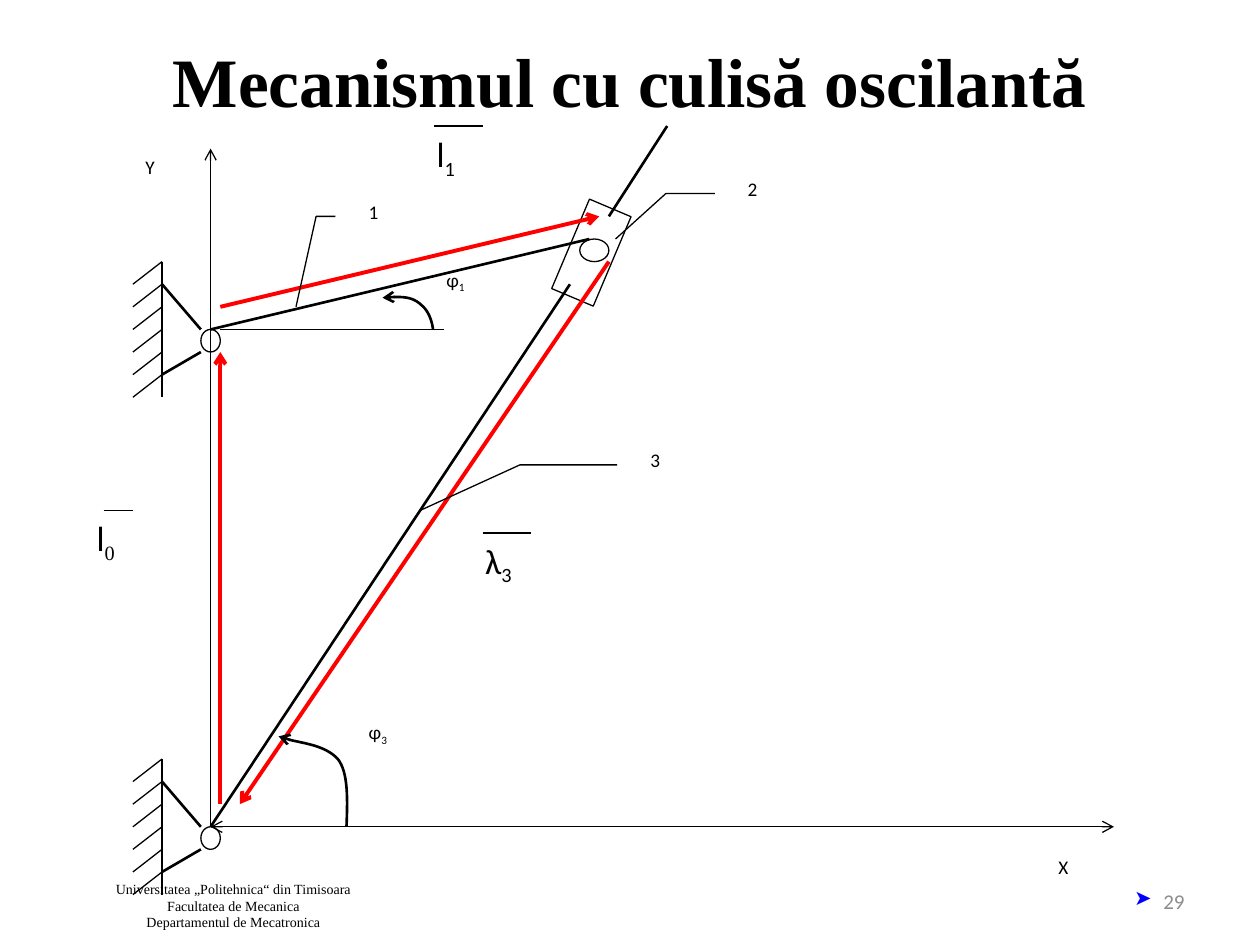
from dataclasses import dataclass

from lxml import etree
from pptx import Presentation
from pptx import util as u
from pptx.dml.color import RGBColor
from pptx.enum import shapes, text
from pptx.oxml.ns import qn


@dataclass(frozen=True)
class Theme:
    """Colours, fonts and sizes of the slide."""
    black: str = "000000"
    white: str = "FFFFFF"
    vector: str = "FF0000"
    bullet: str = "0000FF"
    grey: str = "8C8C8C"
    serif: str = "Times New Roman"
    sans: str = "Calibri"
    title: float = 39.6
    vector_name: float = 20
    label: float = 11
    number: float = 12
    footer: float = 8
    thin: float = 0.75
    bar: float = 1.5
    thick: float = 2.25


@dataclass(frozen=True)
class Box:
    """An area in centimetres, divided into a grid."""
    left: float
    top: float
    width: float
    height: float
    columns: int = 1
    rows: int = 1

    def point(self, column, row):
        """Return the position of a grid point."""
        return (u.Cm(self.left + column * self.width / self.columns),
                u.Cm(self.top + row * self.height / self.rows))

    def inner(self, column, row, columns, rows):
        """Return a smaller box that keeps the same grid cells."""
        cell_width, cell_height = self.width / self.columns, self.height / self.rows
        return Box(self.left + column * cell_width, self.top + row * cell_height,
                   columns * cell_width, rows * cell_height, columns, rows)

    def frame(self):
        """Return left, top, width and height as lengths."""
        return [u.Cm(value) for value in (self.left, self.top, self.width, self.height)]


THEME = Theme()
MIDDLE = text.MSO_ANCHOR.MIDDLE
ALIGN = text.PP_ALIGN
PRESET = shapes.MSO_SHAPE


def write_text(shape, content, size=THEME.label, font=THEME.sans, color=THEME.black,
               bold=False, align=ALIGN.LEFT, anchor=text.MSO_ANCHOR.TOP,
               subscript="", subscript_font=None, bullet=None, inset=None):
    """Fill a shape with formatted lines and an optional subscript."""
    frame = shape.text_frame
    frame.word_wrap = True
    frame.auto_size = text.MSO_AUTO_SIZE.NONE
    frame.vertical_anchor = anchor
    if inset is not None:
        frame.margin_left = frame.margin_right = u.Cm(inset)
        frame.margin_top = frame.margin_bottom = u.Cm(inset)
    for index, line in enumerate(content.split("\n")):
        paragraph = frame.add_paragraph() if index else frame.paragraphs[0]
        paragraph.alignment = align
        if bullet:
            add_bullet(paragraph, bullet)
        runs = [(line, font, None)]
        if subscript:
            runs.append((subscript, subscript_font or font, "-25000"))
        for words, name, baseline in runs:
            run = paragraph.add_run()
            run.text = words
            run.font.size, run.font.name, run.font.bold = u.Pt(size), name, bold
            run.font.color.rgb = RGBColor.from_string(color)
            if baseline:
                run._r.get_or_add_rPr().set("baseline", baseline)


def add_bullet(paragraph, character):
    """Give a paragraph a coloured hanging bullet."""
    properties = paragraph._p.get_or_add_pPr()
    properties.set("marL", str(u.Cm(0.59)))
    properties.set("indent", str(-u.Cm(0.59)))
    color = etree.SubElement(properties, qn("a:buClr"))
    etree.SubElement(color, qn("a:srgbClr")).set("val", THEME.bullet)
    etree.SubElement(properties, qn("a:buChar")).set("char", character)


def style_line(line, color, width, arrows=()):
    """Set colour, width and arrowheads of a line."""
    line.color.rgb = RGBColor.from_string(color)
    line.width = u.Pt(width)
    for end in arrows:
        etree.SubElement(line._get_or_add_ln(), qn(f"a:{end}")).set("type", "arrow")


def add_line(slide, box, start, end, width=THEME.thin, color=THEME.black, arrows=()):
    """Draw a straight line between two grid points."""
    connector = slide.shapes.add_connector(
        shapes.MSO_CONNECTOR.STRAIGHT, *box.point(*start), *box.point(*end))
    style_line(connector.line, color, width, arrows)
    etree.SubElement(connector._element.spPr, qn("a:effectLst"))


def add_shape(slide, box, preset, outlined=True, rotation=0):
    """Draw a white preset shape that fills a box."""
    shape = slide.shapes.add_shape(preset, *box.frame())
    shape.shadow.inherit = False
    shape.rotation = rotation
    shape.fill.solid()
    shape.fill.fore_color.rgb = RGBColor.from_string(THEME.white)
    if outlined:
        style_line(shape.line, THEME.black, THEME.thin)
    else:
        shape.line.fill.background()
    return shape


def add_curve(slide, box, points):
    """Draw an arrow of Bézier segments through grid control points."""
    start, *others = [box.point(*point) for point in points]
    builder = slide.shapes.build_freeform(*start)
    builder.add_line_segments(others, close=False)
    shape = builder.convert_to_shape()
    outline = shape._element.find(".//" + qn("a:path"))
    segments = outline.findall(qn("a:lnTo"))
    for first in range(0, len(segments), 3):
        curve = etree.SubElement(outline, qn("a:cubicBezTo"))
        for segment in segments[first:first + 3]:
            curve.append(segment[0])
            outline.remove(segment)
    shape.shadow.inherit = False
    shape.fill.background()
    style_line(shape.line, THEME.black, THEME.bar, ["tailEnd"])


def add_support(slide, box):
    """Draw a hatched wall with its pin joint."""
    add_shape(slide, box.inner(7, 3, 2, 1), PRESET.FLOWCHART_CONNECTOR)
    for start, end in [((3, 1), (7, 3)), ((7, 4), (3, 5)), ((3, 0), (3, 6))]:
        add_line(slide, box, start, end, THEME.bar)
    for row in range(box.rows):
        add_line(slide, box, (3, row), (0, row + 1))


def add_linkage(slide, box):
    """Draw the slider, the bars, the axes and the vectors."""
    add_shape(slide, box.inner(47.2, 4.6, 10, 2), PRESET.RECTANGLE, rotation=292.9)
    add_shape(slide, box.inner(51, 5, 3, 1), PRESET.FLOWCHART_CONNECTOR)
    for start, end in [((13, 9), (52, 5)), ((50, 7), (13, 31)), ((54, 4), (60, 0))]:
        add_line(slide, box, start, end, THEME.bar)
    add_line(slide, box, (13, 1), (13, 31), arrows=["headEnd"])
    add_line(slide, box, (13, 31), (106, 31), arrows=["headEnd", "tailEnd"])
    for start, end in [((14, 30), (14, 10)), ((14, 8), (53, 4)), ((54, 6), (16, 30))]:
        add_line(slide, box, start, end, THEME.thick, THEME.vector, ["tailEnd"])


def add_angles(slide, box):
    """Draw the two angle arcs and the horizontal reference."""
    add_line(slide, box, (14, 9), (37, 9))
    add_curve(slide, box, [(27, 31), (27.1, 29.8), (27.2, 28.6), (26.1, 28),
                           (24.8, 27.4), (21, 27.2), (20, 27)])
    add_curve(slide, box, [(35.9, 9), (35.8, 8.6), (35.4, 8.2), (34.9, 8),
                           (34, 7.6), (32.6, 7.5), (30.7, 7.6)])


def add_labels(slide, box):
    """Name the axes, the angles, the vectors and the elements."""
    for name, subscript, area in [("X", "", (99, 32, 11, 3)), ("Y", "", (5, 1, 7, 3)),
                                  ("φ", "3", (28, 26, 15, 4))]:
        shape = add_shape(slide, box.inner(*area), PRESET.RECTANGLE, outlined=False)
        write_text(shape, name, subscript=subscript)
    angle = slide.shapes.add_textbox(*box.inner(36, 6, 12, 4).frame())
    write_text(angle, "φ", subscript="1")
    for name, subscript, font, area, bar in [
            ("l", "0", THEME.serif, (0, 17, 12, 5), (2, 5)),
            ("λ", "3", THEME.sans, (40, 18, 11, 4), (41, 46)),
            ("l", "1", THEME.sans, (35, 0, 11, 4), (36, 41))]:
        shape = add_shape(slide, box.inner(*area), PRESET.RECTANGLE, outlined=False)
        write_text(shape, name, THEME.vector_name, subscript=subscript, subscript_font=font)
        add_line(slide, box, (bar[0], area[1]), (bar[1], area[1]))
    for name, area, leader in [
            ("2", (67, 2, 7, 3), (0.33, -0.3, 0.33, -1.02, 1, -1.76)),
            ("1", (28, 3, 9, 2), (0.5, -0.24, 0.5, -0.46, 2.5, -0.69)),
            ("3", (57, 14, 8, 3), (0.33, -0.27, 0.33, -1.52, 1, -2.8))]:
        shape = add_shape(slide, box.inner(*area), PRESET.LINE_CALLOUT_2_NO_BORDER)
        for index, value in enumerate(leader):
            shape.adjustments[index] = value
        write_text(shape, name)


def add_title(slide, box):
    """Place and format the title."""
    title = slide.shapes.title
    title.left, title.top, title.width, title.height = box.frame()
    write_text(title, "Mecanismul cu culisă oscilantă", THEME.title, THEME.serif,
               bold=True, align=ALIGN.CENTER, inset=0)


def add_footer(slide, box):
    """Place the institution on the left and the slide number on the right."""
    institution = slide.shapes.add_textbox(*box.inner(0, 0.1, 5.92, 1.02).frame())
    write_text(institution, "Universitatea „Politehnica“ din Timisoara\n"
               "Facultatea de Mecanica\nDepartamentul de Mecatronica",
               THEME.footer, THEME.serif, align=ALIGN.CENTER, inset=0)
    number = slide.shapes.add_textbox(*box.inner(16.46, 0, 5.92, 1.02).frame())
    write_text(number, "29", THEME.number, color=THEME.grey, align=ALIGN.RIGHT,
               anchor=MIDDLE, bullet="➤")


def main():
    """Build the slide and save it."""
    presentation = Presentation()
    presentation.slide_width, presentation.slide_height = u.Cm(25.4), u.Cm(19.05)
    slide = presentation.slides.add_slide(presentation.slide_layouts[5])
    diagram = Box(1.7, 2.54, 21.54, 15.95, columns=110, rows=35)
    add_title(slide, Box(1.27, 0.76, 22.86, 3.18))
    for row in (28, 6):
        add_support(slide, diagram.inner(5, row, 9, 6))
    add_linkage(slide, diagram)
    add_labels(slide, diagram)
    add_angles(slide, diagram)
    add_footer(slide, Box(1.75, 17.65, 1, 1))
    presentation.save("out.pptx")


if __name__ == "__main__":
    main()
